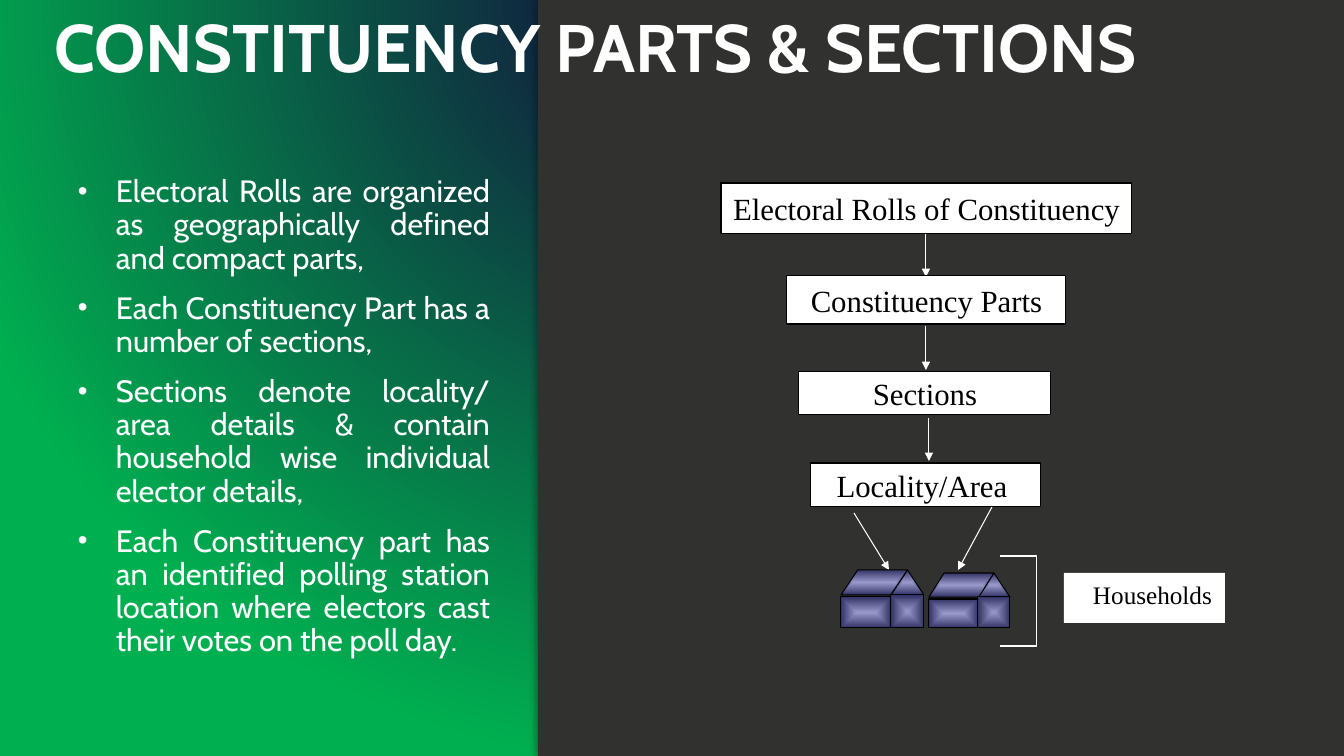
import lxml.etree
import pptx
import pptx.dml.color
import pptx.enum.shapes
import pptx.enum.text
import pptx.oxml.ns
import pptx.util

SCALE = 914400 / 100.8
COLORS = {
    "white": "FFFFFF", "black": "000000", "panel": "31312F",
    "navy": "130D3C", "green": "00B050", "lilac": "9999CC", "indigo": "333366",
}
RGB = {name: pptx.dml.color.RGBColor.from_string(value) for name, value in COLORS.items()}
SHAPES = pptx.enum.shapes.MSO_SHAPE
ALIGN = pptx.enum.text.PP_ALIGN
qn = pptx.oxml.ns.qn


def emu(*lengths):
    return [round(length * SCALE) for length in lengths]


def set_gradient(fill, element, kind, focus, start, end, alpha):
    fill.gradient()
    gradient = element.find(".//" + qn("a:gradFill"))
    for child in list(gradient):
        gradient.remove(child)
    stops = lxml.etree.SubElement(gradient, qn("a:gsLst"))
    for position, name, opacity in ((0, start, alpha), (100000, end, 100000)):
        stop = lxml.etree.SubElement(stops, qn("a:gs"), pos=str(position))
        color = lxml.etree.SubElement(stop, qn("a:srgbClr"), val=COLORS[name])
        if opacity < 100000:
            lxml.etree.SubElement(color, qn("a:alpha"), val=str(opacity))
    circle = lxml.etree.SubElement(gradient, qn("a:path"), path=kind)
    edges = {side: str(value * 1000) for side, value in zip("ltrb", focus)}
    lxml.etree.SubElement(circle, qn("a:fillToRect"), **edges)


presentation = pptx.Presentation()
presentation.slide_width, presentation.slide_height = emu(1344, 756)
slide = presentation.slides.add_slide(presentation.slide_layouts[6])
set_gradient(slide.background.fill, slide._element, "circle", (50, -80, 50, 180),
             "navy", "green", 76000)

panel = slide.shapes.add_shape(SHAPES.RECTANGLE, *emu(538, 0, 806, 756))
panel.shadow.inherit = False
panel.fill.solid()
panel.fill.fore_color.rgb = RGB["panel"]
panel.line.fill.background()
effects = panel._element.spPr.find(qn("a:effectLst"))
shadow = lxml.etree.SubElement(effects, qn("a:outerShdw"), blurRad="50800", dist="25400",
                               dir="10800000", algn="r", rotWithShape="0")
shadow_color = lxml.etree.SubElement(shadow, qn("a:srgbClr"), val=COLORS["black"])
lxml.etree.SubElement(shadow_color, qn("a:alpha"), val="25000")

title = slide.shapes.add_textbox(*emu(19, 0, 1153, 92))
title.text_frame.word_wrap = True
paragraph = title.text_frame.paragraphs[0]
paragraph.text = "CONSTITUENCY PARTS & SECTIONS"
paragraph.alignment = ALIGN.CENTER
paragraph.font.name = "Cabin"
paragraph.font.size = pptx.util.Pt(48)
paragraph.font.bold = True
paragraph.font.color.rgb = RGB["white"]

points = [
    "Electoral Rolls are organized as geographically defined and compact parts,",
    "Each Constituency Part has a number of sections,",
    "Sections denote locality/ area details & contain household wise individual elector details,",
    "Each Constituency part has an identified polling station location where electors "
    "cast their votes on the poll day.",
]
body = slide.shapes.add_textbox(*emu(68, 171, 432, 509))
body.text_frame.word_wrap = True
indent = emu(38)[0]
for index, point in enumerate(points):
    paragraph = body.text_frame.paragraphs[0] if index == 0 else body.text_frame.add_paragraph()
    paragraph.text = point
    paragraph.alignment = ALIGN.JUSTIFY
    paragraph.line_spacing = 0.9
    paragraph.space_before = pptx.util.Pt(12 if index else 0)
    properties = paragraph._p.get_or_add_pPr()
    properties.set("marL", str(indent))
    properties.set("indent", str(-indent))
    lxml.etree.SubElement(properties, qn("a:buSzPct"), val="90000")
    lxml.etree.SubElement(properties, qn("a:buFont"), typeface="Arial")
    lxml.etree.SubElement(properties, qn("a:buChar"), char="•")
    paragraph.font.name = "Cabin"
    paragraph.font.size = pptx.util.Pt(22)
    paragraph.font.color.rgb = RGB["white"]

lines = [
    (926, 227, 926, 277, True),
    (926, 326, 926, 370, True),
    (929, 418, 929, 461, True),
    (854, 513, 889, 570, True),
    (992, 507, 958, 570, True),
    (1000, 556, 1037, 556, False),
    (1037, 556, 1037, 646, False),
    (1000, 646, 1037, 646, False),
]
for *ends, has_arrow in lines:
    connector = slide.shapes.add_connector(pptx.enum.shapes.MSO_CONNECTOR.STRAIGHT, *emu(*ends))
    connector.line.color.rgb = RGB["white"]
    connector.line.width = pptx.util.Pt(0.75)
    if has_arrow:
        lxml.etree.SubElement(connector.line._get_or_add_ln(), qn("a:tailEnd"), type="triangle")
    lxml.etree.SubElement(connector._element.spPr, qn("a:effectLst"))

boxes = [
    ("Electoral Rolls of Constituency", 721, 183, 411, 51, 22, 10, 10),
    ("Constituency Parts", 787, 275, 279, 49, 22, 10, 10),
    ("Sections", 799, 372, 252, 43, 22, 10, 10),
    ("Locality/Area", 811, 463, 230, 44, 22, 10, 18),
    ("Households", 1064, 573, 161, 50, 18, 29, 10),
]
for label, left, top, width, height, size, left_inset, right_inset in boxes:
    is_level = label != "Households"
    box = slide.shapes.add_shape(SHAPES.RECTANGLE, *emu(left, top, width, height))
    box.shadow.inherit = False
    box.fill.solid()
    box.fill.fore_color.rgb = RGB["white"]
    if is_level:
        box.line.color.rgb = RGB["black"]
        box.line.width = pptx.util.Pt(0.75)
    else:
        box.line.fill.background()
    frame = box.text_frame
    frame.word_wrap = not is_level
    anchors = pptx.enum.text.MSO_ANCHOR
    frame.vertical_anchor = anchors.MIDDLE if is_level else anchors.TOP
    frame.margin_left, frame.margin_top, frame.margin_right, frame.margin_bottom = emu(
        left_inset, 10, right_inset, 5)
    paragraph = frame.paragraphs[0]
    paragraph.text = label
    paragraph.alignment = ALIGN.CENTER if is_level else ALIGN.LEFT
    paragraph.line_spacing = 0.9
    paragraph.font.name = "Times New Roman"
    paragraph.font.size = pptx.util.Pt(size)
    paragraph.font.color.rgb = RGB["black"]

ground = 628
for left, top, front, side, roof, slant in ((841, 570, 50, 33, 25, 0.67),
                                            (929, 573, 49, 32, 24, 0.63)):
    house = slide.shapes.add_group_shape()
    eaves = top + roof
    parts = [
        (SHAPES.RECTANGLE, left, eaves + 2, front, ground - eaves - 2),
        (SHAPES.ISOSCELES_TRIANGLE, left + front, top, side, roof),
        (SHAPES.PARALLELOGRAM, left, top, front + side / 2, roof),
        (SHAPES.RECTANGLE, left + front, eaves, side, ground - eaves),
    ]
    for kind, *place in parts:
        part = house.shapes.add_shape(kind, *emu(*place))
        part.shadow.inherit = False
        set_gradient(part.fill, part._element, "rect" if kind == SHAPES.RECTANGLE else "shape",
                     (50, 50, 50, 50), "lilac", "indigo", 100000)
        part.line.color.rgb = RGB["black"]
        part.line.width = pptx.util.Pt(0.75)
        if kind == SHAPES.PARALLELOGRAM:
            part.adjustments[0] = slant

presentation.save("out.pptx")
